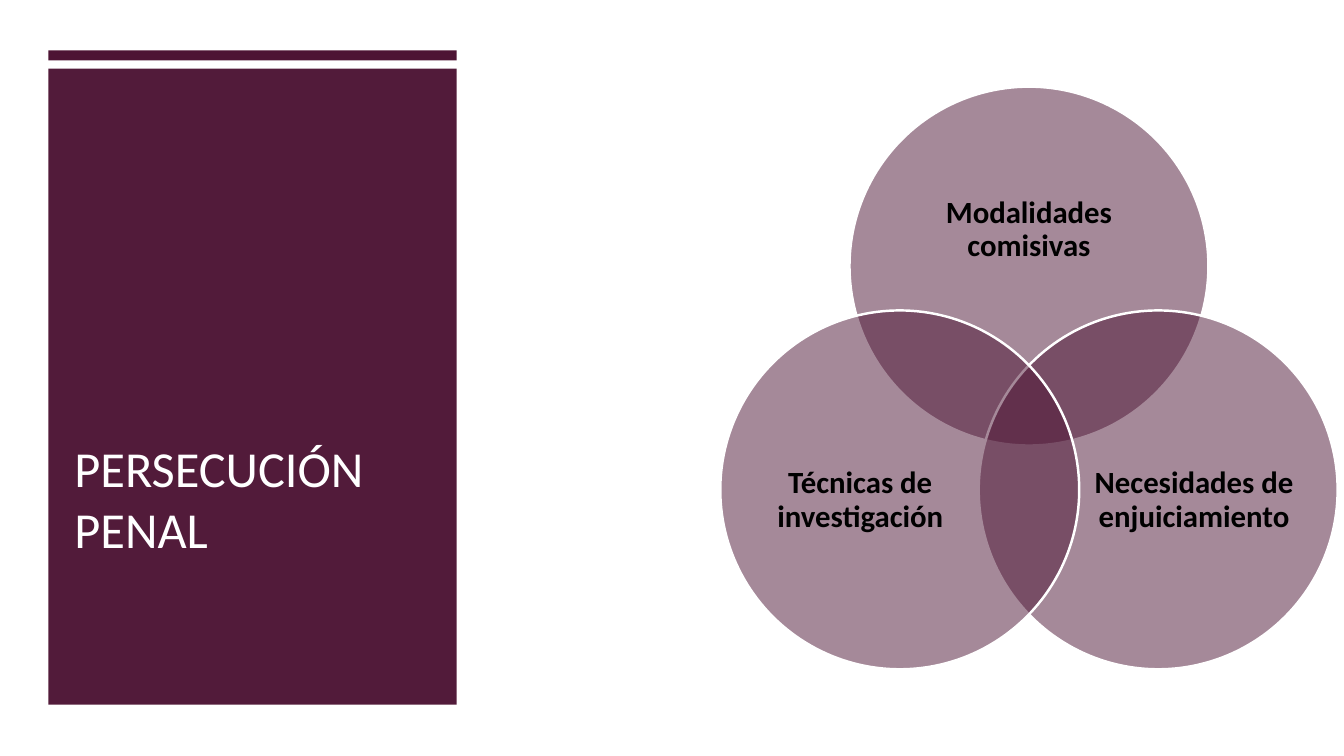
from dataclasses import dataclass
from math import cos, radians, sin

from lxml import etree
from pptx import Presentation
from pptx import util as u
from pptx.dml.color import RGBColor
from pptx.enum import shapes, text
from pptx.oxml.ns import qn

TITLE = "PERSECUCIÓN PENAL"

# text, angle of the circle, then label shift and size as shares of the diameter
CIRCLES = [
    ("Modalidades comisivas", -90, (0, -0.1), (0.73, 0.45)),
    ("Necesidades de enjuiciamiento", 30, (0.1, 0.03), (0.6, 0.55)),
    ("Técnicas de investigación", 150, (-0.11, 0.03), (0.6, 0.55)),
]

# left, top, width, height in percent of the slide
PANEL = (3.6, 9.07, 30.38, 84.13)
BAR = (3.6, 6.67, 30.38, 1.33)
HEAD = (4.8, 31.2, 27.98, 43.33)

# in percent: middle of the diagram, then diameter and ring radius by height
MID = (76.56, 54.93)
DIAM, RING = 47.47, 19.73


@dataclass(frozen=True)
class Theme:
    plum: str = "4D1434"
    white: str = "FFFFFF"
    black: str = "000000"
    font: str = "Calibri"
    head: int = 36
    label: int = 22
    edge: float = 1.75


T = Theme()
W, H = u.Inches(13.33), u.Inches(7.5)


def scale(box):
    """Turn percent of the slide into lengths."""
    x, y, w, h = box
    return [int(v / 100) for v in (x * W, y * H, w * W, h * H)]


def around(x, y, w, h):
    """Box centred on a point."""
    return [int(v) for v in (x - w / 2, y - h / 2, w, h)]


def add_form(slide, kind, box, alpha=100, edge=None):
    form = slide.shapes.add_shape(kind, *box)
    form.shadow.inherit = False
    form.fill.solid()
    form.fill.fore_color.rgb = RGBColor.from_string(T.plum)
    if alpha < 100:
        tint = form.fill._xPr.find(".//" + qn("a:srgbClr"))
        etree.SubElement(tint, qn("a:alpha"), val=str(alpha * 1000))
    if edge:
        form.line.color.rgb = RGBColor.from_string(T.white)
        form.line.width = u.Pt(edge)
    else:
        form.line.fill.background()


def add_text(slide, words, box, size, color, bold=False, inset=None,
             anchor=text.MSO_ANCHOR.MIDDLE, align=text.PP_ALIGN.LEFT, lead=1.0):
    frame = slide.shapes.add_textbox(*box).text_frame
    frame.word_wrap = True
    frame.vertical_anchor = anchor
    if inset is not None:
        frame.margin_left = frame.margin_right = inset
        frame.margin_top = frame.margin_bottom = inset
    para = frame.paragraphs[0]
    para.alignment, para.line_spacing = align, lead
    run = para.add_run()
    run.text = words
    font = run.font
    font.name, font.size, font.bold = T.font, u.Pt(size), bold
    font.color.rgb = RGBColor.from_string(color)


def main():
    deck = Presentation()
    deck.slide_width, deck.slide_height = W, H
    slide = deck.slides.add_slide(deck.slide_layouts[6])
    kinds = shapes.MSO_SHAPE

    add_form(slide, kinds.RECTANGLE, scale(PANEL), alpha=97)
    add_form(slide, kinds.RECTANGLE, scale(BAR))
    add_text(slide, TITLE, scale(HEAD), T.head, T.white,
             anchor=text.MSO_ANCHOR.BOTTOM)

    diam, ring = DIAM * H / 100, RING * H / 100
    for words, angle, (dx, dy), (w, h) in CIRCLES:
        x = MID[0] * W / 100 + ring * cos(radians(angle))
        y = MID[1] * H / 100 + ring * sin(radians(angle))
        add_form(slide, kinds.OVAL, around(x, y, diam, diam),
                 alpha=50, edge=T.edge)
        label = around(x + dx * diam, y + dy * diam, w * diam, h * diam)
        add_text(slide, words, label, T.label, T.black, bold=True, inset=0,
                 align=text.PP_ALIGN.CENTER, lead=0.9)

    deck.save("out.pptx")


if __name__ == "__main__":
    main()
